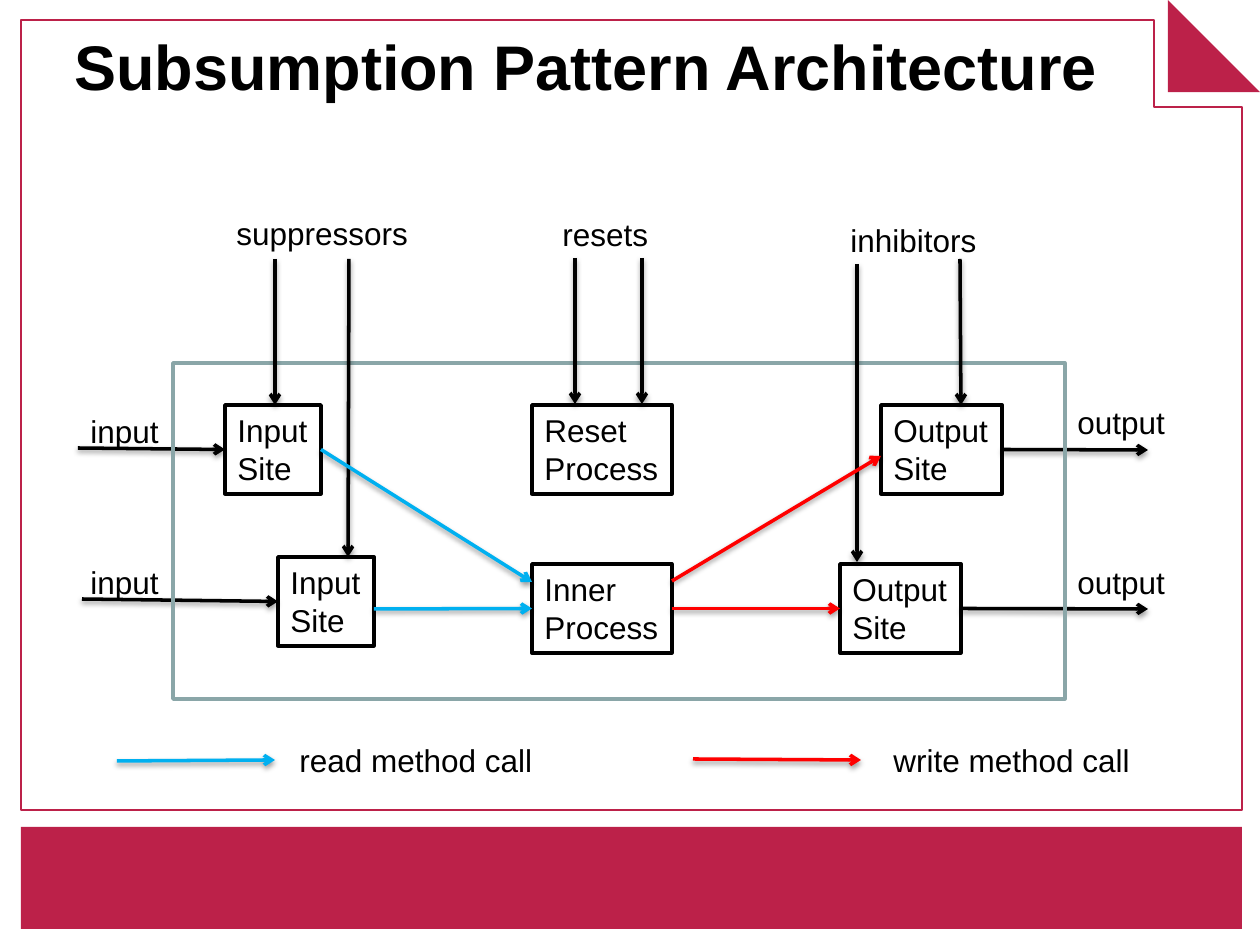
from lxml import etree
from pptx import Presentation
from pptx.dml.color import RGBColor
from pptx.enum.shapes import MSO_CONNECTOR, MSO_SHAPE
from pptx.enum.text import MSO_ANCHOR, MSO_AUTO_SIZE, PP_ALIGN
from pptx.oxml.ns import qn
from pptx.util import Pt

PX = 914400 / 126
RECTANGLE, TRIANGLE = MSO_SHAPE.RECTANGLE, MSO_SHAPE.RIGHT_TRIANGLE
STRAIGHT = MSO_CONNECTOR.STRAIGHT
TOP, MIDDLE = MSO_ANCHOR.TOP, MSO_ANCHOR.MIDDLE
LEFT, CENTER = PP_ALIGN.LEFT, PP_ALIGN.CENTER
NO_FIT, GROW = MSO_AUTO_SIZE.NONE, MSO_AUTO_SIZE.SHAPE_TO_FIT_TEXT
SIDE_LEFT, SIDE_RIGHT = 1, 3

BLACK, WHITE, CRIMSON = "000000", "FFFFFF", "BC2149"
GRAY, BLUE, RED = "8AA6A8", "00B0F0", "FF0000"
BODY_FONT = {"name": "Arial", "size": Pt(18), "bold": False}
TITLE_FONT = {"name": "Arial", "size": Pt(36), "bold": True}
LABEL_FRAME = {"word_wrap": False, "auto_size": GROW, "vertical_anchor": TOP}
TITLE_FRAME = {"word_wrap": True, "auto_size": NO_FIT, "vertical_anchor": MIDDLE}


def emu(*lengths):
    return [round(length * PX) for length in lengths]


def color(value):
    return RGBColor.from_string(value)


def apply(target, values):
    for name, value in values.items():
        setattr(target, name, value)


class Diagram:
    """Holds the style and the current slide."""

    def __init__(self, deck):
        self.page = deck.slides.add_slide(deck.slide_layouts[5])
        self.shapes = self.page.shapes

    def paint(self, shape, fill, line, width):
        shape.shadow.inherit = False
        if fill:
            shape.fill.solid()
            shape.fill.fore_color.rgb = color(fill)
        else:
            shape.fill.background()
        if line:
            shape.line.color.rgb = color(line)
            shape.line.width = Pt(width)
        else:
            shape.line.fill.background()

    def shape(self, kind, area, fill=None, line=None, width=2):
        shape = self.shapes.add_shape(kind, *emu(*area))
        self.paint(shape, fill, line, width)
        return shape

    def outline(self, points, fill, line, width):
        builder = self.shapes.build_freeform(*points[0], scale=PX)
        builder.add_line_segments(points[1:], close=True)
        self.paint(builder.convert_to_shape(), fill, line, width)

    def put_text(self, shape, lines, frame=LABEL_FRAME, font=BODY_FONT, align=LEFT):
        text = shape.text_frame
        apply(text, frame)
        for number, line in enumerate(lines):
            para = text.add_paragraph() if number else text.paragraphs[0]
            para.alignment = align
            span = para.add_run()
            span.text = line
            apply(span.font, font)
            span.font.color.rgb = color(BLACK)

    def title(self, text, area):
        title = self.shapes.title
        title.left, title.top, title.width, title.height = emu(*area)
        self.put_text(title, [text], TITLE_FRAME, TITLE_FONT, CENTER)
        # Bring the title in front of the page frame
        self.shapes._spTree.append(title._element)

    def node(self, lines, area):
        box = self.shape(RECTANGLE, area, WHITE, BLACK)
        self.put_text(box, lines)
        return box

    def label(self, text, left, top, width):
        self.put_text(self.shapes.add_textbox(*emu(left, top, width, 51)), [text])

    def arrow(self, start, end, line=BLACK, source=None, target=None):
        arrow = self.shapes.add_connector(STRAIGHT, *emu(*start, *end))
        if source:
            arrow.begin_connect(source, SIDE_RIGHT)
        if target:
            arrow.end_connect(target, SIDE_LEFT)
        arrow.line.color.rgb = color(line)
        arrow.line.width = Pt(2)
        properties = arrow._element.spPr
        etree.SubElement(properties.find(qn("a:ln")), qn("a:tailEnd"), type="arrow")
        # Soft shadow straight below
        effects = etree.SubElement(properties, qn("a:effectLst"))
        shadow = etree.SubElement(effects, qn("a:outerShdw"), blurRad=str(int(Pt(3.1))),
                                  dist=str(int(Pt(1.6))), dir="5400000",
                                  rotWithShape="0")
        tint = etree.SubElement(shadow, qn("a:srgbClr"), val=BLACK)
        etree.SubElement(tint, qn("a:alpha"), val="38000")


def main():
    deck = Presentation()
    deck.slide_width, deck.slide_height = emu(1260, 945)
    diagram = Diagram(deck)

    # Page frame with folded corner, and footer band
    diagram.outline([(21, 20), (1154, 20), (1154, 107), (1242, 107), (1242, 810),
                     (21, 810)], WHITE, CRIMSON, 0.75)
    diagram.shape(TRIANGLE, (1168, 0, 92, 92), CRIMSON)
    diagram.shape(RECTANGLE, (21, 827, 1221, 102), CRIMSON)
    diagram.title("Subsumption Pattern Architecture", (29, 26, 1114, 79))

    # Sites and processes
    upper_input = diagram.node(["Input", "Site"], (225, 405, 96, 89))
    upper_output = diagram.node(["Output", "Site"], (881, 405, 121, 89))
    diagram.node(["Reset", "Process"], (532, 405, 140, 89))
    inner = diagram.node(["Inner", "Process"], (532, 564, 140, 89))
    lower_input = diagram.node(["Input", "Site"], (278, 557, 96, 89))
    lower_output = diagram.node(["Output", "Site"], (840, 564, 121, 89))

    # Inputs and outputs
    diagram.arrow((78, 448), (225, 450), target=upper_input)
    diagram.arrow((82, 599), (278, 601), target=lower_input)
    diagram.arrow((1002, 449), (1148, 450), source=upper_output)
    diagram.arrow((961, 609), (1148, 609), source=lower_output)
    for text, left, top, width in (("input", 78, 406, 94), ("input", 78, 557, 94),
                                   ("output", 1065, 397, 113),
                                   ("output", 1065, 557, 113)):
        diagram.label(text, left, top, width)

    # Module boundary
    diagram.shape(RECTANGLE, (173, 363, 892, 336), line=GRAY)

    # Suppressors, resets and inhibitors from above
    for start, end in (((275, 259), (275, 405)), ((349, 259), (348, 557)),
                       ((575, 258), (575, 404)), ((642, 258), (642, 404)),
                       ((960, 259), (961, 405)), ((857, 264), (857, 562))):
        diagram.arrow(start, end)
    diagram.label("suppressors", 224, 208, 199)
    diagram.label("resets", 550, 209, 112)
    diagram.label("inhibitors", 838, 215, 152)

    # Read and write calls
    diagram.arrow((321, 450), (532, 582), BLUE, source=upper_input)
    diagram.arrow((374, 609), (532, 609), BLUE, target=inner)
    diagram.arrow((672, 608), (840, 609), RED, source=inner, target=lower_output)
    diagram.arrow((672, 581), (881, 456), RED)

    # Legend
    diagram.arrow((117, 761), (275, 760), BLUE)
    diagram.label("read method call", 287, 735, 261)
    diagram.arrow((693, 759), (861, 760), RED)
    diagram.label("write method call", 881, 735, 265)

    deck.save("out.pptx")


if __name__ == "__main__":
    main()
